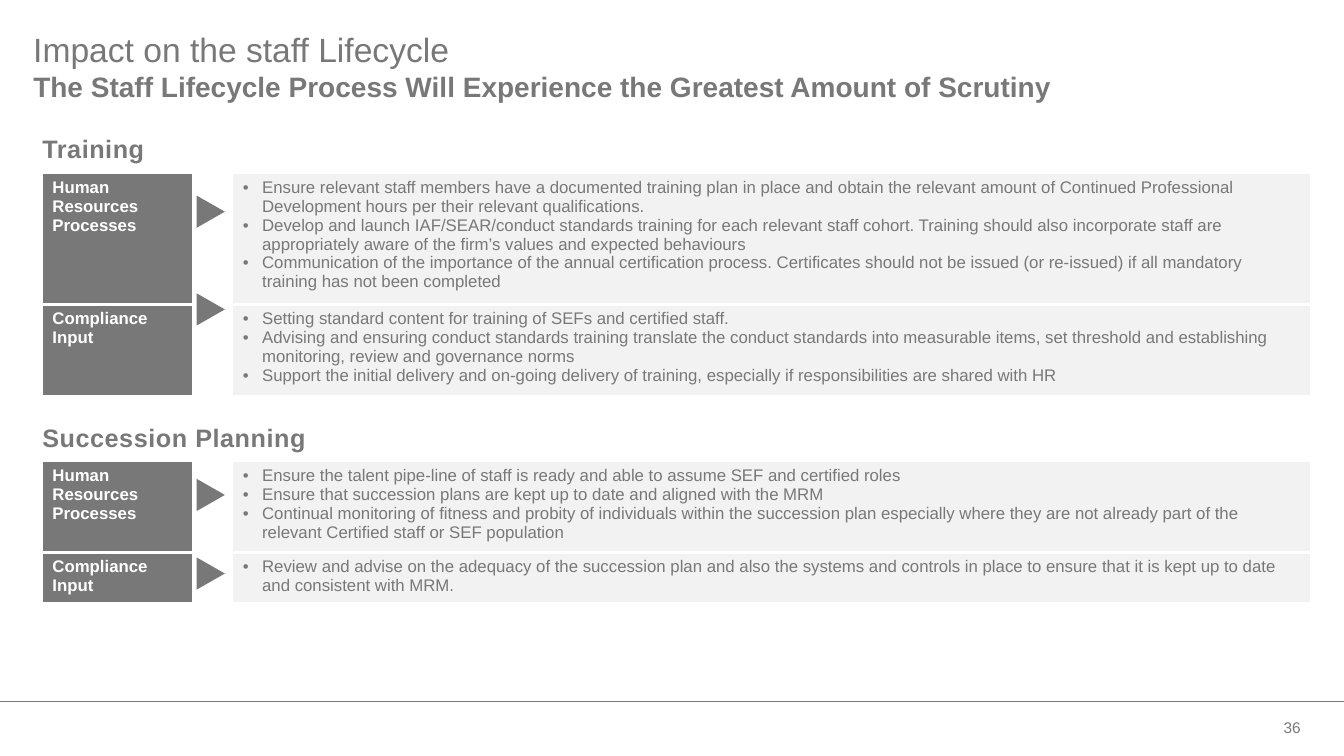
from dataclasses import dataclass

from lxml import etree
from pptx import Presentation
from pptx.dml.color import RGBColor
from pptx.enum.shapes import MSO_CONNECTOR, MSO_SHAPE
from pptx.enum.text import MSO_ANCHOR, PP_ALIGN
from pptx.oxml.ns import qn
from pptx.util import Inches, Pt

STRAIGHT = MSO_CONNECTOR.STRAIGHT
TRIANGLE = MSO_SHAPE.ISOSCELES_TRIANGLE
TOP, MIDDLE = MSO_ANCHOR.TOP, MSO_ANCHOR.MIDDLE
LEFT, RIGHT = PP_ALIGN.LEFT, PP_ALIGN.RIGHT

COLORS = {"gray": "787878", "pale": "F2F2F2", "white": "FFFFFF"}
COLUMN_WIDTHS = (1.49, 0.4, 10.69)
TABLE_LEFT = 0.42
BULLET_INDENT = 0.19
ARROW_LEFT, ARROW_WIDTH, ARROW_HEIGHT = 1.93, 0.32, 0.28


@dataclass(frozen=True)
class Label:
    text: str
    box: tuple[float, float, float, float]
    size: float
    bold: bool = False
    insets: tuple[float, float, float, float] = (0, 0, 0, 0.08)
    line_spacing: float = 1.0
    letter_spacing: float = 0
    anchor: MSO_ANCHOR = TOP
    align: PP_ALIGN = LEFT


@dataclass(frozen=True)
class Duty:
    owner: str
    actions: tuple[str, ...]
    height: float
    arrow_top: float


@dataclass(frozen=True)
class Stage:
    name: str
    heading_top: float
    table_top: float
    duties: tuple[Duty, ...]


LABELS = (
    Label("Impact on the staff Lifecycle", (0.33, 0.33, 9.63, 0.39), 24, line_spacing=0.9),
    Label("The Staff Lifecycle Process Will Experience the Greatest Amount of Scrutiny",
          (0.33, 0.73, 11.11, 0.44), 20, bold=True, line_spacing=0.9),
    Label("36", (12.27, 7.07, 0.73, 0.3), 11, insets=(0.1, 0.05, 0.1, 0.05),
          anchor=MIDDLE, align=RIGHT),
)

STAGES = (
    Stage("Training", 1.27, 1.72, (
        Duty("Human Resources Processes", (
            "Ensure relevant staff members have a documented training plan in place and obtain the "
            "relevant amount of Continued Professional Development hours per their relevant "
            "qualifications.",
            "Develop and launch IAF/SEAR/conduct standards training for each relevant staff cohort. "
            "Training should also incorporate staff are appropriately aware of the firm’s values "
            "and expected behaviours",
            "Communication of the importance of the annual certification process. Certificates "
            "should not be issued (or re-issued) if all mandatory training has not been completed",
        ), 1.3, 1.96),
        Duty("Compliance Input", (
            "Setting standard content for training of SEFs and certified staff.",
            "Advising and ensuring conduct standards training translate the conduct standards into "
            "measurable items, set threshold and establishing monitoring, review and governance "
            "norms",
            "Support the initial delivery and on-going delivery of training, especially if "
            "responsibilities are shared with HR",
        ), 0.9, 2.93),
    )),
    Stage("Succession Planning", 4.14, 4.58, (
        Duty("Human Resources Processes", (
            "Ensure the talent pipe-line of staff is ready and able to assume SEF and certified "
            "roles",
            "Ensure that succession plans are kept up to date and aligned with the MRM",
            "Continual monitoring of fitness and probity of individuals within the succession plan "
            "especially where they are not already part of the relevant Certified staff or SEF "
            "population",
        ), 0.9, 4.77),
        Duty("Compliance Input", (
            "Review and advise on the adequacy of the succession plan and also the systems and "
            "controls in place to ensure that it is kept up to date and consistent with MRM.",
        ), 0.5, 5.55),
    )),
)


def rgb(color: str) -> RGBColor:
    return RGBColor.from_string(COLORS[color])


def apply(target, values: dict) -> None:
    for attribute, value in values.items():
        setattr(target, attribute, value)


def write(paragraph, text: str, size: float, color: str, bold: bool):
    run = paragraph.add_run()
    run.text = text
    apply(run.font, {"name": "Arial", "size": Pt(size), "bold": bold})
    run.font.color.rgb = rgb(color)
    return run


def add_label(slide, label: Label) -> None:
    frame = slide.shapes.add_textbox(*map(Inches, label.box)).text_frame
    left, top, right, bottom = map(Inches, label.insets)
    apply(frame, {"word_wrap": True, "vertical_anchor": label.anchor, "margin_left": left,
                  "margin_top": top, "margin_right": right, "margin_bottom": bottom})
    paragraph = frame.paragraphs[0]
    apply(paragraph, {"alignment": label.align, "line_spacing": label.line_spacing})
    run = write(paragraph, label.text, label.size, "gray", label.bold)
    if label.letter_spacing:
        run.font._element.set("spc", str(round(label.letter_spacing * 100)))


def add_bullet(paragraph) -> None:
    properties = paragraph._p.get_or_add_pPr()
    properties.set("marL", str(Inches(BULLET_INDENT)))
    properties.set("indent", str(-Inches(BULLET_INDENT)))
    etree.SubElement(properties, qn("a:buFont")).set("typeface", "Arial")
    etree.SubElement(properties, qn("a:buChar")).set("char", "•")


def set_borders(cell, top: float, bottom: float) -> None:
    properties = cell._tc.get_or_add_tcPr()
    for side, width in {"L": 1, "R": 1, "T": top, "B": bottom}.items():
        border = etree.SubElement(properties, qn(f"a:ln{side}"), w=str(Pt(width)))
        fill = etree.SubElement(border, qn("a:solidFill"))
        etree.SubElement(fill, qn("a:srgbClr")).set("val", COLORS["white"])


def fill_cell(cell, texts: tuple[str, ...], background: str, color: str, bulleted: bool) -> None:
    cell.fill.solid()
    cell.fill.fore_color.rgb = rgb(background)
    for index, text in enumerate(texts):
        frame = cell.text_frame
        paragraph = frame.add_paragraph() if index else frame.paragraphs[0]
        if bulleted:
            add_bullet(paragraph)
        write(paragraph, text, 12, color, not bulleted)


def add_arrow(slide, top: float) -> None:
    arrow = slide.shapes.add_shape(TRIANGLE, Inches(ARROW_LEFT), Inches(top),
                                   Inches(ARROW_WIDTH), Inches(ARROW_HEIGHT))
    arrow.rotation = 90
    arrow.shadow.inherit = False
    arrow.fill.solid()
    arrow.fill.fore_color.rgb = rgb("gray")
    arrow.line.fill.background()


def add_stage(slide, stage: Stage) -> None:
    add_label(slide, Label(stage.name, (TABLE_LEFT, stage.heading_top, 5.79, 0.4), 18, bold=True,
                           insets=(0, 0.05, 0.1, 0.05), letter_spacing=0.4))
    height = sum(duty.height for duty in stage.duties)
    table = slide.shapes.add_table(
        len(stage.duties), len(COLUMN_WIDTHS), Inches(TABLE_LEFT), Inches(stage.table_top),
        Inches(sum(COLUMN_WIDTHS)), Inches(height)).table
    apply(table, {"first_row": False, "horz_banding": False})
    for column, width in zip(table.columns, COLUMN_WIDTHS):
        column.width = Inches(width)
    for index, (row, duty) in enumerate(zip(table.rows, stage.duties)):
        row.height = Inches(duty.height)
        is_last = index == len(stage.duties) - 1
        for cell in row.cells:
            set_borders(cell, 3 if index else 1, 1 if is_last else 3)
        owner, gap, actions = row.cells
        fill_cell(owner, (duty.owner,), "gray", "white", False)
        gap.fill.background()
        fill_cell(actions, duty.actions, "pale", "gray", True)
        add_arrow(slide, duty.arrow_top)


def add_footer_rule(slide) -> None:
    rule = slide.shapes.add_connector(STRAIGHT, 0, Inches(6.96), Inches(13.33), Inches(6.96))
    rule.line.color.rgb = rgb("gray")
    rule.line.width = Pt(0.5)
    etree.SubElement(rule._element.spPr, qn("a:effectLst"))


def main() -> None:
    deck = Presentation()
    apply(deck, {"slide_width": Inches(13.33), "slide_height": Inches(7.5)})
    slide = deck.slides.add_slide(deck.slide_layouts[6])
    add_footer_rule(slide)
    for label in LABELS:
        add_label(slide, label)
    for stage in STAGES:
        add_stage(slide, stage)
    deck.save("out.pptx")


if __name__ == "__main__":
    main()
